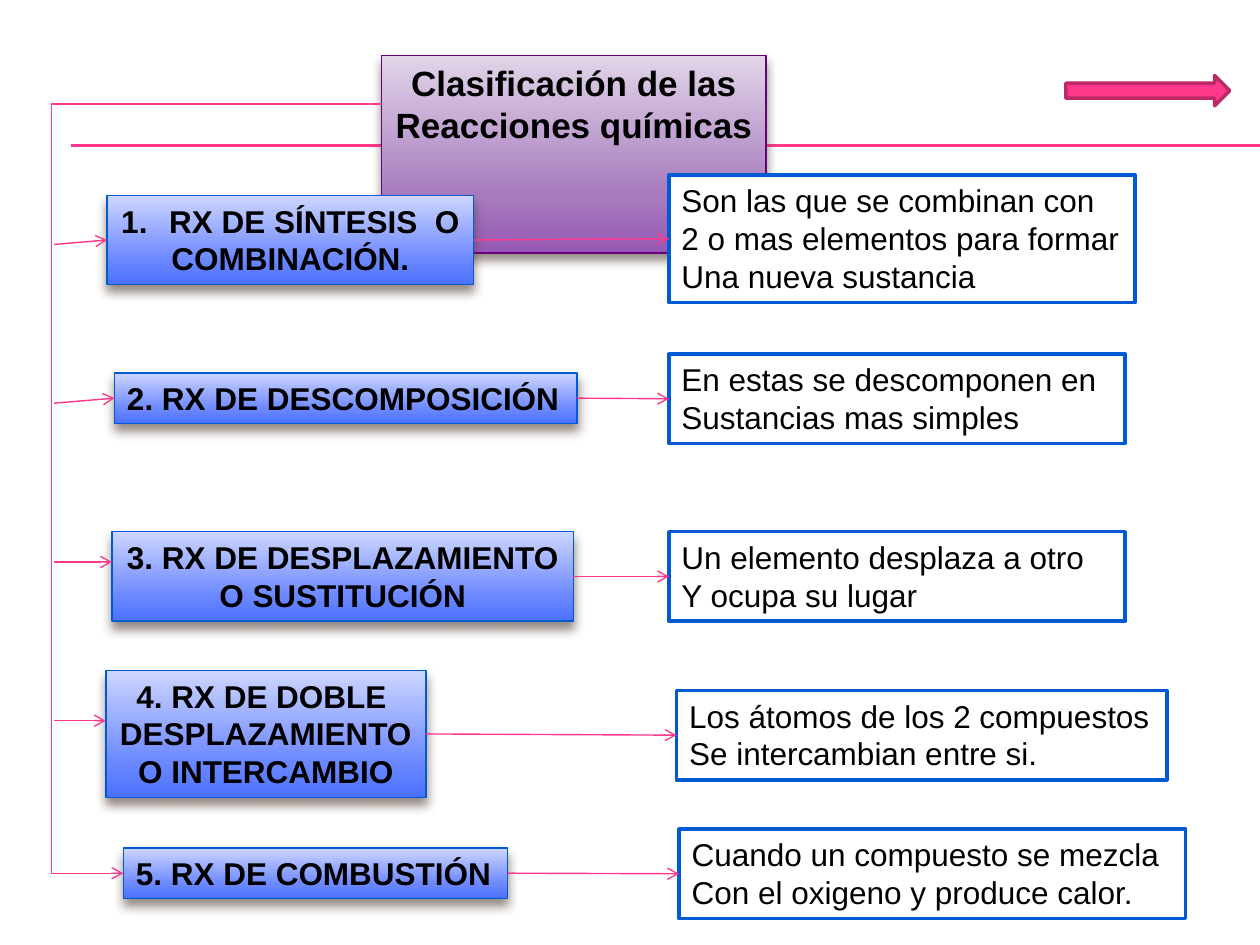
from typing import NamedTuple

import pptx
import pptx.dml.color
import pptx.enum.dml
import pptx.enum.shapes
import pptx.enum.text
import pptx.oxml
import pptx.oxml.ns
import pptx.util
from lxml import etree

Inches = pptx.util.Inches
Pt = pptx.util.Pt
RGB = pptx.dml.color.RGBColor
qn = pptx.oxml.ns.qn
Align = pptx.enum.text.PP_ALIGN
Line = pptx.enum.shapes.MSO_CONNECTOR

PINK = RGB(0xFF, 0x38, 0x8C)
ROSE = RGB(0xBD, 0x29, 0x68)
BLUE = RGB(0x00, 0x5B, 0xD3)
PURPLE = RGB(0x68, 0x00, 0x7F)
BROWN = RGB(0x4E, 0x3B, 0x30)
BLACK = RGB(0, 0, 0)
WHITE = RGB(0xFF, 0xFF, 0xFF)
LILAC = (RGB(0xE1, 0xD4, 0xE8), RGB(0xA6, 0x7A, 0xBD), RGB(0x96, 0x58, 0xB4))
SKY = (RGB(0xCE, 0xD6, 0xFF), RGB(0x6C, 0x88, 0xFF), RGB(0x4B, 0x71, 0xFF))
STOPS = (0, 72, 100)
THIN = 0.79
STEM = 0.43


class Box(NamedTuple):
    left: float
    top: float
    width: float
    height: float

    @property
    def right(self) -> float:
        return self.left + self.width

    @property
    def mid(self) -> float:
        return self.top + self.height / 2


class Row(NamedTuple):
    name: str
    box: Box
    note: str
    frame: Box
    entry: float | None = None
    align: Align = Align.CENTER
    auto: bool = False


ROWS = [
    Row("RX DE SÍNTESIS  O\nCOMBINACIÓN.", Box(0.85, 1.55, 2.91, 0.71),
        "Son las que se combinan con\n2 o mas elementos para formar\nUna nueva sustancia",
        Box(5.31, 1.39, 3.7, 1.01), auto=True),
    Row("2. RX DE DESCOMPOSICIÓN", Box(0.91, 2.96, 3.67, 0.4),
        "En estas se descomponen en\nSustancias mas simples",
        Box(5.31, 2.81, 3.62, 0.71), align=Align.LEFT),
    Row("3. RX DE DESPLAZAMIENTO\nO SUSTITUCIÓN", Box(0.89, 4.22, 3.66, 0.71),
        "Un elemento desplaza a otro\nY ocupa su lugar",
        Box(5.31, 4.22, 3.62, 0.71), entry=4.46),
    Row("4. RX DE DOBLE \nDESPLAZAMIENTO\nO INTERCAMBIO", Box(0.84, 5.32, 2.54, 1.01),
        "Los átomos de los 2 compuestos\nSe intercambian entre si.",
        Box(5.37, 5.48, 3.89, 0.71), entry=5.72),
    Row("5. RX DE COMBUSTIÓN", Box(0.98, 6.73, 3.05, 0.4),
        "Cuando un compuesto se mezcla\nCon el oxigeno y produce calor.",
        Box(5.39, 6.58, 4.02, 0.71), align=Align.LEFT),
]
HEAD = Box(3.03, 0.44, 3.05, 0.77)


def place(shape, box: Box) -> None:
    shape.left, shape.top, shape.width, shape.height = map(Inches, box)


def write(shape, text: str, size: float = 18, bold: bool = False,
          align: Align = Align.LEFT, wrap: bool = True, auto: bool = False) -> None:
    frame = shape.text_frame
    frame.text = text
    frame.word_wrap = wrap
    frame.auto_size = pptx.enum.text.MSO_AUTO_SIZE.SHAPE_TO_FIT_TEXT
    frame.vertical_anchor = pptx.enum.text.MSO_ANCHOR.TOP
    for i, para in enumerate(frame.paragraphs):
        para.alignment = align
        for run in para.runs:
            font = run.font
            font.name, font.size, font.bold = "Arial", Pt(size), bold
            font.color.rgb = BLACK
        if auto:
            props = para._p.get_or_add_pPr()
            props.set("marL", str(Inches(0.38)))
            props.set("indent", str(Inches(-0.38)))
            if i == 0:
                etree.SubElement(props, qn("a:buAutoNum"), type="arabicPeriod")


def edge(shape, color: RGB, width: float) -> None:
    shape.line.color.rgb = color
    shape.line.width = Pt(width)


def shade(shape, colors: tuple[RGB, ...], rim: RGB) -> None:
    """Give a shape a downward gradient, a thin rim and a soft shadow."""
    shape.fill.gradient()
    shape.fill.gradient_angle = 270
    props = shape._element.spPr
    stops = props.find(".//" + qn("a:gsLst"))
    for stop in list(stops):
        stops.remove(stop)
    for spot, color in zip(STOPS, colors):
        stop = etree.SubElement(stops, qn("a:gs"), pos=str(spot * 1000))
        etree.SubElement(stop, qn("a:srgbClr"), val=str(color))
    edge(shape, rim, THIN)
    glow = etree.SubElement(props, qn("a:effectLst"))
    drop = etree.SubElement(glow, qn("a:outerShdw"), blurRad=str(Pt(6)),
                            dist=str(Pt(4)), dir="5400000", rotWithShape="0")
    tint = etree.SubElement(drop, qn("a:srgbClr"), val=str(BROWN))
    etree.SubElement(tint, qn("a:alpha"), val="60000")


def link(slide, x1: float, y1: float, x2: float, y2: float,
         kind: Line = Line.STRAIGHT, width: float = THIN, arrow: bool = True):
    line = slide.shapes.add_connector(kind, *map(Inches, (x1, y1, x2, y2)))
    edge(line, PINK, width)
    if arrow:
        etree.SubElement(line.line._get_or_add_ln(), qn("a:tailEnd"), type="arrow")
    etree.SubElement(line._element.spPr, qn("a:effectLst"))
    return line


def label(slide, row: Row) -> None:
    shape = slide.shapes.add_textbox(0, 0, 0, 0)
    place(shape, row.box)
    shade(shape, SKY, BLUE)
    write(shape, row.name, bold=True, align=row.align, wrap=False, auto=row.auto)


def note(slide, row: Row) -> None:
    shape = slide.shapes.add_textbox(0, 0, 0, 0)
    place(shape, row.frame)
    shape.fill.solid()
    shape.fill.fore_color.rgb = WHITE
    edge(shape, BLUE, 2)
    write(shape, row.note)


def main() -> None:
    deck = pptx.Presentation()
    deck.slide_width, deck.slide_height = Inches(10), Inches(7.5)
    slide = deck.slides.add_slide(deck.slide_layouts[5])

    for y in (1.15, 1.16):
        link(slide, 0.56, y, 10, y, width=0.75, arrow=False)

    title = slide.shapes.title
    place(title, HEAD)
    shade(title, LILAC, PURPLE)
    write(title, "Clasificación de las\nReacciones químicas", size=20, bold=True,
          align=Align.CENTER, wrap=False)
    slide.shapes._spTree.append(title._element)  # in front of the rule

    for row in ROWS:
        label(slide, row)
        note(slide, row)

    last = ROWS[-1].box
    trunk = link(slide, HEAD.left, HEAD.mid, last.left, last.mid, kind=Line.ELBOW)
    guides = trunk._element.spPr.find(".//" + qn("a:avLst"))
    etree.SubElement(guides, qn("a:gd"), name="adj1", fmla="val 127800")

    for i, row in enumerate(ROWS):
        if i < len(ROWS) - 1:
            link(slide, STEM, 1.94 + 1.26 * i, row.box.left, row.entry or row.box.mid)
        link(slide, row.box.right, row.box.mid, row.frame.left, row.frame.mid)

    arrow = slide.shapes.add_shape(
        pptx.enum.shapes.MSO_SHAPE.RIGHT_ARROW, 0, 0, 0, 0)
    place(arrow, Box(8.46, 0.6, 1.3, 0.24))
    arrow.shadow.inherit = False
    arrow.fill.solid()
    arrow.fill.fore_color.rgb = PINK
    edge(arrow, ROSE, 2)

    deck.save("out.pptx")


if __name__ == "__main__":
    main()
